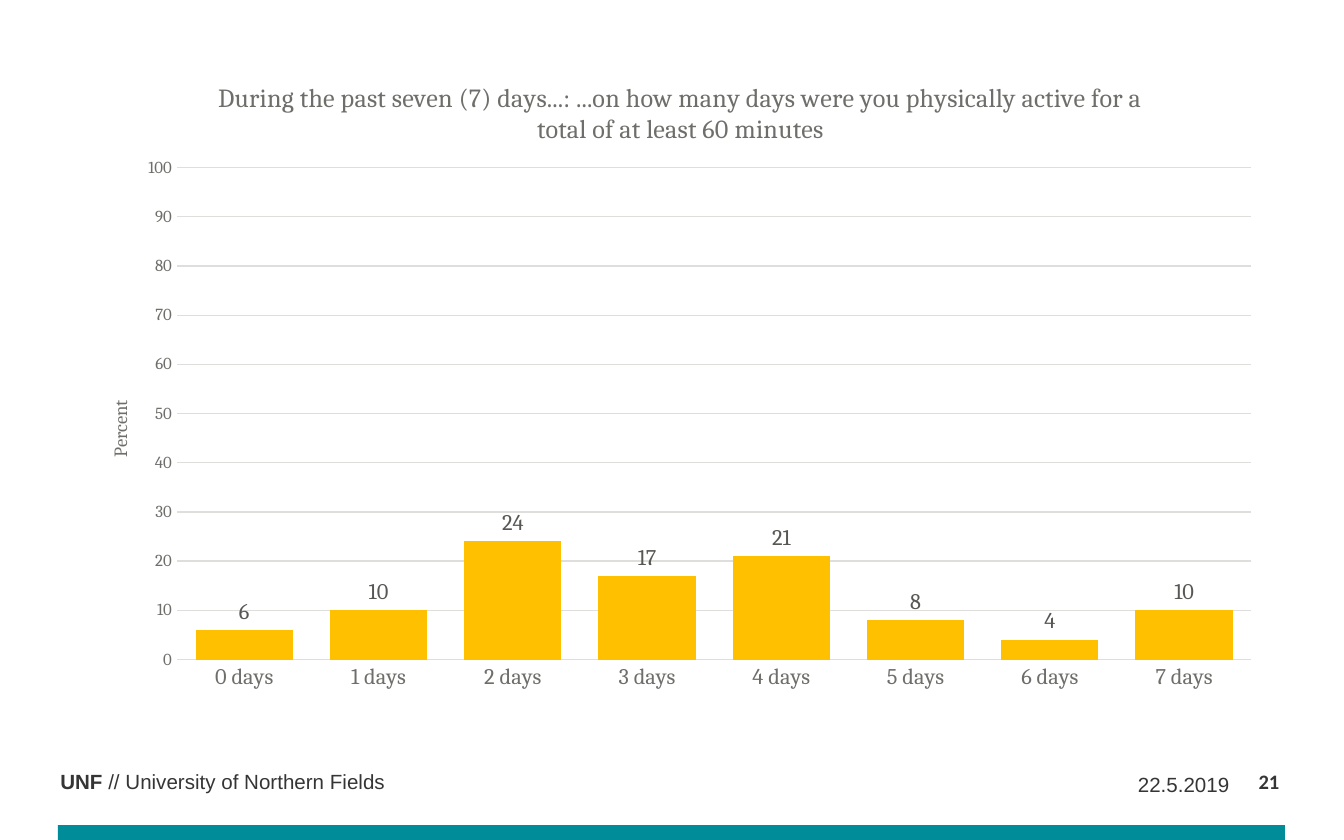
from lxml import etree
from pptx import Presentation
from pptx.chart.data import CategoryChartData
from pptx.dml.color import RGBColor
from pptx.enum.chart import XL_CHART_TYPE, XL_LABEL_POSITION, XL_TICK_MARK
from pptx.enum.shapes import MSO_SHAPE
from pptx.enum.text import MSO_ANCHOR, PP_ALIGN
from pptx.oxml.ns import qn
from pptx.util import Pt

COLUMNS = XL_CHART_TYPE.COLUMN_CLUSTERED
OUTSIDE_END = XL_LABEL_POSITION.OUTSIDE_END
NO_TICK = XL_TICK_MARK.NONE
RECTANGLE = MSO_SHAPE.RECTANGLE
TOP, MIDDLE = MSO_ANCHOR.TOP, MSO_ANCHOR.MIDDLE
LEFT, RIGHT = PP_ALIGN.LEFT, PP_ALIGN.RIGHT

QUESTION = ("During the past seven (7) days...: ...on how many days were you "
            "physically active for a total of at least 60 minutes")
AXIS_TITLE = "Percent"
PERCENT_BY_DAYS = [6, 10, 24, 17, 21, 8, 4, 10]
FOOTER = [
    {"spans": [("UNF", True), (" // University of Northern Fields", False)],
     "at": (25.2, 408.2, 278, 21), "margins": (7.2, 3.6, 7.2, 3.6),
     "font": "Arial", "align": LEFT, "anchor": TOP},
    {"spans": [("22.5.2019", False)],
     "at": (589.7, 411.8, 69, 16.6), "margins": (0, 0, 0, 0),
     "font": "Arial", "align": RIGHT, "anchor": MIDDLE},
    {"spans": [("21", True)],
     "at": (657.4, 410.4, 28, 16.6), "margins": (0, 1.4, 0, 0),
     "font": "Calibri", "align": RIGHT, "anchor": TOP},
]
BAND_AT = (31, 442, 657.4, 9.4)
CHART_AT = (36.7, 26.6, 646.6, 351.4)
# Fractions of the chart frame: x, y and, for the plot, w, h
PLOT_AT = {"x": 0.09, "y": 0.18, "w": 0.89, "h": 0.75}
TITLE_AT = {"x": 0.12, "y": 0.04}
AXIS_TITLE_AT = {"x": 0.03, "y": 0.53}

THEME = {
    "band": "008C99", "footer": "353535", "column": "FFC000", "grid": "DEDEDC",
    "chart_font": "Cambria", "footer_size": 11, "line": 0.75,
    "chart": (10, "1D1D1C"), "title": (14, "6E6E6A"),
    "axis_title": (10, "6E6E6A"), "categories": (12, "6E6E6A"),
    "values": (9, "6E6E6A"), "labels": (12, "575754"),
}


def color(name):
    return RGBColor.from_string(name)


def style_font(font, size, hue, name, bold=False):
    for key, value in {"size": Pt(size), "name": name, "bold": bold}.items():
        setattr(font, key, value)
    font.color.rgb = color(hue)


def style_chart_font(font, role):
    style_font(font, *THEME[role], THEME["chart_font"])


def style_line(line):
    line.color.rgb = color(THEME["grid"])
    line.width = Pt(THEME["line"])


def place(element, fractions, index, inner=False):
    """Give a chart element a manual layout as its child at index."""
    for old in element.findall(qn("c:layout")):
        element.remove(old)
    layout = etree.Element(qn("c:layout"))
    manual = etree.SubElement(layout, qn("c:manualLayout"))
    if inner:
        etree.SubElement(manual, qn("c:layoutTarget"), val="inner")
    for key in ("x", "y"):
        etree.SubElement(manual, qn(f"c:{key}Mode"), val="edge")
    for key, value in fractions.items():
        etree.SubElement(manual, qn(f"c:{key}"), val=str(value))
    element.insert(index, layout)


def add_title(title, text, role, fractions):
    para = title.text_frame.paragraphs[0]
    span = para.add_run()
    span.text = text
    style_chart_font(span.font, role)
    place(title._element, fractions, 1)


def add_footer_box(slide, item):
    box = slide.shapes.add_textbox(*map(Pt, item["at"]))
    frame = box.text_frame
    frame.word_wrap = True
    frame.vertical_anchor = item["anchor"]
    for side, margin in zip(("left", "top", "right", "bottom"), item["margins"]):
        setattr(frame, f"margin_{side}", Pt(margin))
    para = frame.paragraphs[0]
    para.alignment = item["align"]
    for text, bold in item["spans"]:
        span = para.add_run()
        span.text = text
        style_font(span.font, THEME["footer_size"], THEME["footer"], item["font"], bold)


def add_activity_chart(slide):
    data = CategoryChartData(number_format="#,##0")
    data.categories = [f"{days} days" for days in range(len(PERCENT_BY_DAYS))]
    data.add_series("Series 1", PERCENT_BY_DAYS)
    chart = slide.shapes.add_chart(COLUMNS, *map(Pt, CHART_AT), data).chart
    style_chart_font(chart.font, "chart")
    chart.has_legend = False
    add_title(chart.chart_title, QUESTION, "title", TITLE_AT)

    categories, values = chart.category_axis, chart.value_axis
    for axis, role in ((categories, "categories"), (values, "values")):
        axis.major_tick_mark = axis.minor_tick_mark = NO_TICK
        style_chart_font(axis.tick_labels.font, role)
    style_line(categories.format.line)
    scale = {"minimum_scale": 0, "maximum_scale": 100, "major_unit": 10,
             "has_major_gridlines": True}
    for key, value in scale.items():
        setattr(values, key, value)
    values.format.line.fill.background()
    style_line(values.major_gridlines.format.line)
    add_title(values.axis_title, AXIS_TITLE, "axis_title", AXIS_TITLE_AT)
    body = values.axis_title.text_frame._txBody.find(qn("a:bodyPr"))
    body.set("rot", "-5400000")
    body.set("vert", "horz")

    plot = chart.plots[0]
    for key, value in {"gap_width": 38, "overlap": -27, "vary_by_categories": False,
                       "has_data_labels": True}.items():
        setattr(plot, key, value)
    fill = plot.series[0].format.fill
    fill.solid()
    fill.fore_color.rgb = color(THEME["column"])
    labels = plot.data_labels
    for key, value in {"show_value": True, "number_format": "#,##0",
                       "number_format_is_linked": False,
                       "position": OUTSIDE_END}.items():
        setattr(labels, key, value)
    style_chart_font(labels.font, "labels")
    place(chart._chartSpace.chart.plotArea, PLOT_AT, 0, inner=True)


def main():
    deck = Presentation()
    deck.slide_width, deck.slide_height = Pt(720), Pt(450)
    slide = deck.slides.add_slide(deck.slide_layouts[6])
    band = slide.shapes.add_shape(RECTANGLE, *map(Pt, BAND_AT))
    band.shadow.inherit = False
    band.fill.solid()
    band.fill.fore_color.rgb = color(THEME["band"])
    band.line.fill.background()
    for item in FOOTER:
        add_footer_box(slide, item)
    add_activity_chart(slide)
    deck.save("out.pptx")


if __name__ == "__main__":
    main()
